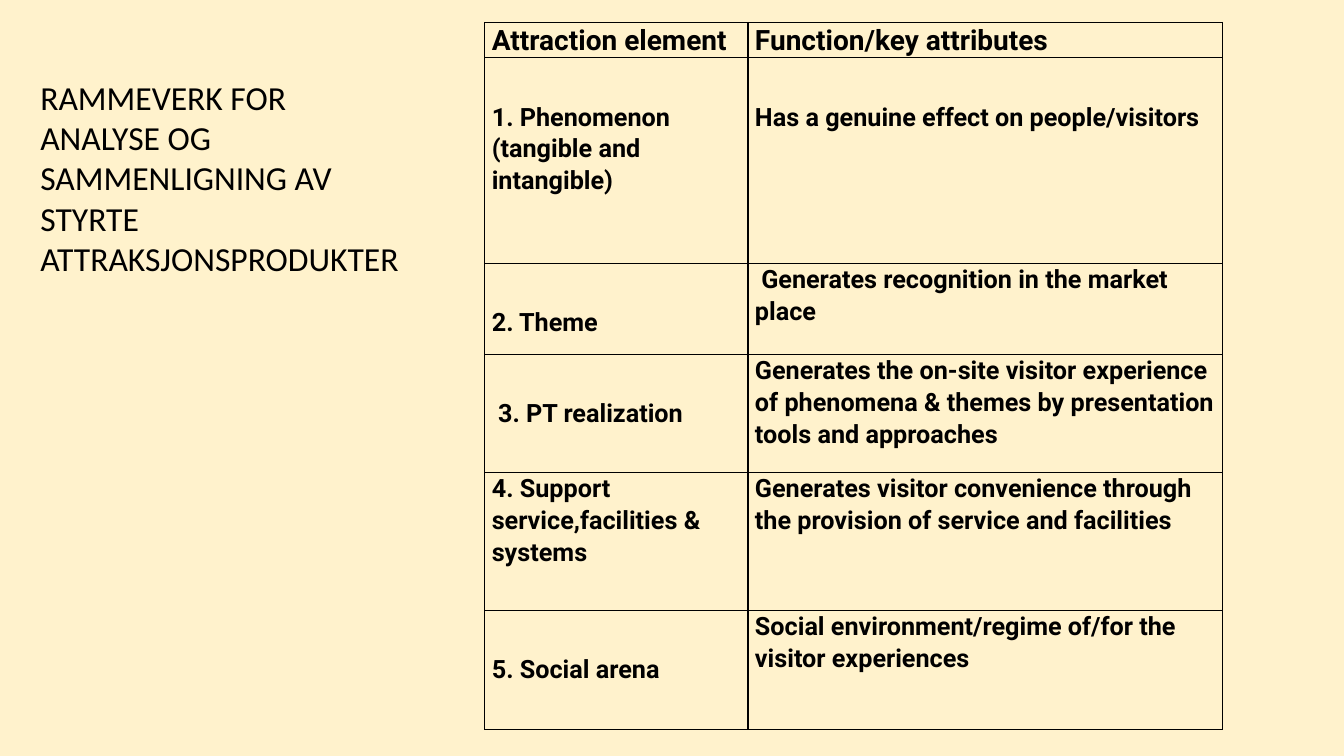
"""Build a slide with a framework table for comparing attraction products."""
from lxml.etree import SubElement
from pptx import Presentation
from pptx.dml.color import RGBColor
from pptx.enum.text import MSO_ANCHOR, MSO_AUTO_SIZE, PP_ALIGN
from pptx.oxml.ns import qn
from pptx.util import Pt

HEADING = "RAMMEVERK FOR ANALYSE OG SAMMENLIGNING AV STYRTE ATTRAKSJONSPRODUKTER"
HEADER = ("Attraction element", "Function/key attributes")
ELEMENTS = [
    ("1. Phenomenon (tangible and intangible)",
     "Has a genuine effect on people/visitors"),
    ("2. Theme", " Generates recognition in the market place"),
    (" 3. PT realization",
     "Generates the on-site visitor experience of phenomena & themes "
     "by presentation tools and approaches"),
    ("4. Support service,facilities & systems",
     "Generates visitor convenience through the provision of service and facilities"),
    ("5. Social arena",
     "Social environment/regime of/for the visitor experiences"),
]
LOWERED = {(1, 0), (1, 1), (2, 0), (3, 0), (5, 0)}
COLUMN_WIDTHS = (188, 339)
ROW_HEIGHTS = (25.2, 147, 65, 84.3, 98.6, 85)
BLACK, CREAM = "000000", "FFF2CC"
DROP = 30.8


def paint(target, color):
    target.rgb = RGBColor.from_string(color)


def write(paragraph, text, font, size, bold):
    run = paragraph.add_run()
    run.text = text
    run.font.name = font
    run.font.size = Pt(size)
    run.font.bold = bold
    paint(run.font.color, BLACK)


def outline(cell):
    properties = cell._tc.get_or_add_tcPr()
    for position, side in enumerate(("lnL", "lnR", "lnT", "lnB")):
        border = SubElement(properties, qn(f"a:{side}"), w=str(Pt(1)))
        fill = SubElement(border, qn("a:solidFill"))
        SubElement(fill, qn("a:srgbClr"), val=BLACK)
        properties.insert(position, border)


def add_heading(slide):
    heading = slide.shapes.title
    heading.left, heading.top = Pt(21.6), Pt(51)
    heading.width, heading.height = Pt(279), Pt(152.6)
    frame = heading.text_frame
    frame.word_wrap = True
    frame.auto_size = MSO_AUTO_SIZE.NONE
    frame.vertical_anchor = MSO_ANCHOR.TOP
    paragraph = frame.paragraphs[0]
    paragraph.alignment = PP_ALIGN.LEFT
    write(paragraph, HEADING, "Calibri", 24, False)


def add_framework(slide):
    rows = [HEADER, *ELEMENTS]
    framework = slide.shapes.add_table(
        len(rows), len(HEADER), Pt(346.3), Pt(16),
        Pt(sum(COLUMN_WIDTHS)), Pt(sum(ROW_HEIGHTS))).table
    framework.first_row = framework.horz_banding = False
    for column, width in zip(framework.columns, COLUMN_WIDTHS):
        column.width = Pt(width)
    for r, (texts, height) in enumerate(zip(rows, ROW_HEIGHTS)):
        framework.rows[r].height = Pt(height)
        for c, text in enumerate(texts):
            cell = framework.cell(r, c)
            cell.margin_left = cell.margin_right = Pt(5)
            cell.margin_top = Pt(DROP if (r, c) in LOWERED else 0)
            cell.margin_bottom = Pt(0)
            cell.fill.background()
            outline(cell)
            paragraph = cell.text_frame.paragraphs[0]
            paragraph.line_spacing = 1.07
            paragraph.space_after = Pt(8)
            write(paragraph, text, "Roboto", 18 if r else 20, True)


def main():
    deck = Presentation()
    deck.slide_width, deck.slide_height = Pt(960), Pt(540)
    slide = deck.slides.add_slide(deck.slide_layouts[5])
    slide.background.fill.solid()
    paint(slide.background.fill.fore_color, CREAM)
    add_framework(slide)
    add_heading(slide)
    deck.save("out.pptx")


if __name__ == "__main__":
    main()
